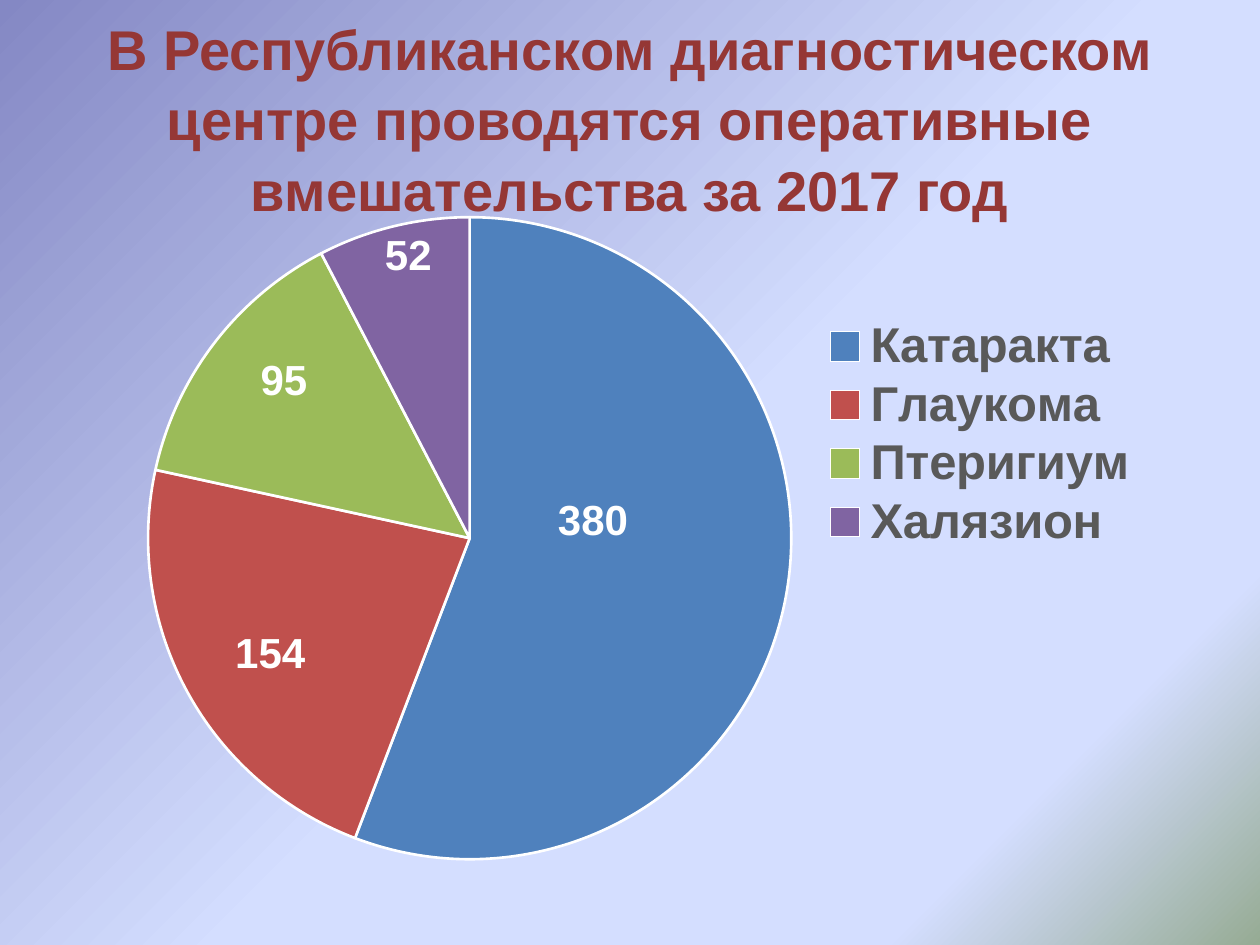
from copy import deepcopy

from pptx import Presentation
from pptx.chart.data import CategoryChartData
from pptx.dml.color import RGBColor
from pptx.enum.chart import XL_CHART_TYPE, XL_LABEL_POSITION, XL_LEGEND_POSITION
from pptx.enum.text import MSO_ANCHOR, MSO_AUTO_SIZE, PP_ALIGN
from pptx.oxml import parse_xml
from pptx.oxml.ns import nsdecls, qn
from pptx.util import Inches, Pt

PIE = XL_CHART_TYPE.PIE
LABEL_CENTER = XL_LABEL_POSITION.CENTER
LEGEND_BOTTOM = XL_LEGEND_POSITION.BOTTOM
MIDDLE = MSO_ANCHOR.MIDDLE
NO_AUTOFIT = MSO_AUTO_SIZE.NONE
ALIGN_CENTER = PP_ALIGN.CENTER

TITLE_ONLY = 5
TITLE = "В Республиканском диагностическом центре проводятся оперативные вмешательства за 2017 год"
BACKGROUND_STOPS = [(0, "8488C4"), (0.53, "D4DEFF"), (0.83, "D4DEFF"), (1, "96AB94")]
# diagnosis, operations, slice colour, label shift as a share of the chart
OPERATIONS = [
    ("Катаракта", 380, "4F81BD", (-0.03, -0.07)),
    ("Глаукома", 154, "C0504D", (-0.05, 0.06)),
    ("Птеригиум", 95, "9BBB59", (-0.05, -0.09)),
    ("Халязион", 52, "8064A2", (-0.02, -0.19)),
]


def rgb(value):
    return RGBColor.from_string(value)


def manual_layout(x, y, width=None, height=None, inner=False):
    """Return a c:layout; without a size, x and y shift the default place."""
    parts = [("layoutTarget", "inner")] if inner else []
    if width is not None:
        parts += [("xMode", "edge"), ("yMode", "edge")]
    parts += [("x", x), ("y", y)]
    if width is not None:
        parts += [("w", width), ("h", height)]
    body = "".join(f'<c:{tag} val="{value}"/>' for tag, value in parts)
    return parse_xml(
        f"<c:layout {nsdecls('c')}><c:manualLayout>{body}</c:manualLayout></c:layout>"
    )


def set_layout(parent, layout, after=None):
    """Replace the layout of a chart part, placing it after the named child."""
    for old in parent.findall(qn("c:layout")):
        parent.remove(old)
    index = 0 if after is None else parent.index(parent.find(qn(after))) + 1
    parent.insert(index, layout)


class SlideBuilder:
    font_name = "Arial"

    def __init__(self, slide):
        self.slide = slide

    def style(self, font, size, color):
        font.name = self.font_name
        font.size = Pt(size)
        font.bold = True
        font.color.rgb = rgb(color)

    def background(self, stops):
        fill = self.slide.background.fill
        fill.gradient()
        fill.gradient_angle = 315
        stop_list = self.slide.element.find(".//" + qn("a:gsLst"))
        while len(stop_list) < len(stops):
            stop_list.append(deepcopy(stop_list[0]))
        for stop, (position, color) in zip(fill.gradient_stops, stops):
            stop.position = position
            stop.color.rgb = rgb(color)

    def title(self, text, left, top, width, height):
        title = self.slide.shapes.title
        title.left, title.top = Inches(left), Inches(top)
        title.width, title.height = Inches(width), Inches(height)
        frame = title.text_frame
        frame.text = text
        frame.auto_size = NO_AUTOFIT
        frame.vertical_anchor = MIDDLE
        paragraph = frame.paragraphs[0]
        paragraph.alignment = ALIGN_CENTER
        paragraph.line_spacing = 1.05
        self.style(paragraph.font, 32, "953735")

    def pie(self, operations, left, top, width, height):
        data = CategoryChartData()
        data.categories = [name for name, *_ in operations]
        data.add_series("Series 1", [count for _, count, *_ in operations])
        chart = self.slide.shapes.add_chart(
            PIE, Inches(left), Inches(top), Inches(width), Inches(height), data
        ).chart
        chart.has_title = False
        chart.font.name = "Calibri"
        chart.font.size = Pt(10)
        chart.font.color.rgb = rgb("000000")

        plot = chart.plots[0]
        plot.vary_by_categories = True
        plot_area = chart.element.find(".//" + qn("c:plotArea"))
        set_layout(plot_area, manual_layout(0.062, 0.033, 0.577, 0.967, inner=True))

        self.slices(plot.series[0], operations)
        self.legend(chart)

    def slices(self, series, operations):
        labels = series.data_labels
        labels.show_value = True
        labels.position = LABEL_CENTER
        self.style(labels.font, 24, "FFFFFF")
        for index, (_, _, color, shift) in enumerate(operations):
            point = series.points[index]
            point.format.fill.solid()
            point.format.fill.fore_color.rgb = rgb(color)
            point.format.line.color.rgb = rgb("FFFFFF")
            point.format.line.width = Pt(1.5)
            label = point.data_label
            self.style(label.font, 24, "FFFFFF")
            label.position = LABEL_CENTER
            set_layout(labels._element.findall(qn("c:dLbl"))[index],
                       manual_layout(*shift), after="c:idx")

    def legend(self, chart):
        chart.has_legend = True
        legend = chart.legend
        legend.position = LEGEND_BOTTOM
        legend.include_in_layout = False
        self.style(legend.font, 28, "595959")
        set_layout(legend._element, manual_layout(0.65, 0.18, 0.28, 0.36),
                   after="c:legendPos")


def main():
    presentation = Presentation()
    presentation.slide_width, presentation.slide_height = Inches(10), Inches(7.5)
    layout = presentation.slide_layouts[TITLE_ONLY]
    builder = SlideBuilder(presentation.slides.add_slide(layout))
    builder.background(BACKGROUND_STOPS)
    builder.title(TITLE, 0.5, 0.3, 9, 1.25)
    builder.pie(OPERATIONS, 0.5, 1.55, 9.21, 5.28)
    presentation.save("out.pptx")


if __name__ == "__main__":
    main()
